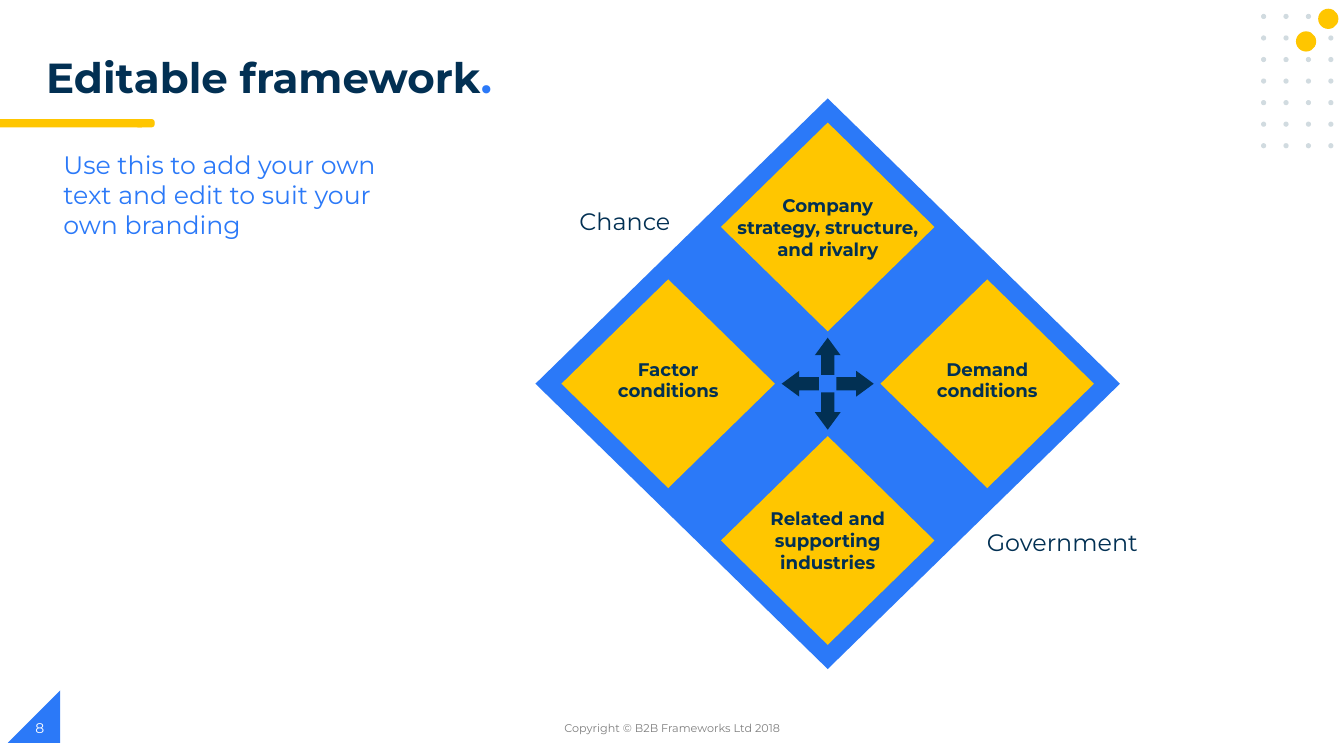
from copy import deepcopy
from itertools import product

from pptx import Presentation
from pptx.dml.color import RGBColor
from pptx.enum.shapes import MSO_SHAPE
from pptx.enum.text import MSO_ANCHOR, MSO_AUTO_SIZE, PP_ALIGN
from pptx.oxml.ns import qn
from pptx.util import Cm, Pt

BLUE = RGBColor(0x2B, 0x79, 0xF8)
GOLD = RGBColor(0xFF, 0xC6, 0x00)
NAVY = RGBColor(0x02, 0x30, 0x53)
GREY = RGBColor(0x7F, 0x7F, 0x7F)
PALE = RGBColor(0xD1, 0xDB, 0xE0)
WHITE = RGBColor(0xFF, 0xFF, 0xFF)

TITLE = [("Editable framework", NAVY), (".", BLUE)]

# Text, box (left, top, width, height in cm), size, colour, format of the frame
PAD = dict(margin_left=Cm(0.25), margin_right=Cm(0.25),
           margin_top=Cm(0.13), margin_bottom=Cm(0.13))
BARE = dict.fromkeys(PAD, 0)
MID = PAD | dict(vertical_anchor=MSO_ANCHOR.MIDDLE)
NOTES = [
    ("Copyright © B2B Frameworks Ltd 2018", (11.23, 17.83, 11.43, 1.02),
     8, GREY, MID, PP_ALIGN.CENTER),
    ("8", (0.64, 17.83, 7.62, 1.02), 10, WHITE, MID, PP_ALIGN.LEFT),
    ("Use this to add your own text and edit to suit your own branding",
     (1.35, 3.63, 9.02, 4.39), 18, BLUE, PAD, PP_ALIGN.LEFT),
    ("Chance", (14.6, 5.2, 3.2, 0.76), 17, NAVY, BARE, PP_ALIGN.LEFT),
    ("Government", (24.87, 13.3, 4.6, 0.76), 17, NAVY, BARE, PP_ALIGN.LEFT),
]

# Side of the centre (x, y), text (\v breaks a line), arrow, lift of the text
FORCES = [
    (0, -1, "Company\vstrategy, structure,\vand rivalry", MSO_SHAPE.UP_ARROW, 0),
    (1, 0, "Demand\vconditions", MSO_SHAPE.RIGHT_ARROW, 0.2),
    (0, 1, "Related and\vsupporting\vindustries", MSO_SHAPE.DOWN_ARROW, 0),
    (-1, 0, "Factor\vconditions", MSO_SHAPE.LEFT_ARROW, 0.2),
]
MIDX, MIDY = 20.86, 9.67
OUTER = (14.73, 14.38)
INNER = (5.38, 5.26)
STEPX, STEPY = 4.02, 3.95
ARROW = (0.94, 0.65)
GAP = 0.69

DOTS = dict(cols=4, rows=7, left=31.78, top=0.35, dx=0.565, dy=0.543, size=0.13)
DISCS = [(33.22, 0.22), (32.66, 0.79)]


def apply(item, **form):
    for key, value in form.items():
        setattr(item, key, value)


def draw(kind, left, top, wide, high, color):
    shape = slide.shapes.add_shape(kind, Cm(left), Cm(top), Cm(wide), Cm(high))
    shape.shadow.inherit = False
    shape.fill.solid()
    shape.fill.fore_color.rgb = color
    shape.line.fill.background()
    return shape


def center(kind, x, y, size, color):
    wide, high = size
    return draw(kind, x - wide / 2, y - high / 2, wide, high, color)


def style(run, size, color, bold=False):
    apply(run.font, name="Montserrat", size=Pt(size), bold=bold)
    run.font.color.rgb = color


def write(frame, text, size, color, align, bold=False):
    frame.text = text
    para = frame.paragraphs[0]
    para.alignment = align
    for run in para.runs:
        style(run, size, color, bold)
    for gap in para._p.findall(qn("a:br")):
        gap.append(deepcopy(para.runs[0]._r.rPr))


deck = Presentation()
apply(deck, slide_width=Cm(33.87), slide_height=Cm(19.05))
slide = deck.slides.add_slide(deck.slide_layouts[5])

# Corner, rule and dots
corner = draw(MSO_SHAPE.RIGHT_TRIANGLE, 0.2, 17.4, 1.32, 1.32, BLUE)
corner._element.spPr.find(qn("a:xfrm")).set("flipH", "1")
for top in (3.0, 3.05):
    draw(MSO_SHAPE.FLOWCHART_TERMINATOR, 3.4, top, 0.5, 0.16, GOLD)
    draw(MSO_SHAPE.RECTANGLE, 0, top, 3.58, 0.16, GOLD)
for row, col in product(range(DOTS["rows"]), range(DOTS["cols"])):
    draw(MSO_SHAPE.OVAL, DOTS["left"] + col * DOTS["dx"],
         DOTS["top"] + row * DOTS["dy"], DOTS["size"], DOTS["size"], PALE)
for left, top in DISCS:
    draw(MSO_SHAPE.OVAL, left, top, 0.51, 0.51, GOLD)

# Title
title = slide.shapes.title
apply(title, left=Cm(0.91), top=Cm(1.32), width=Cm(14.33), height=Cm(1.52))
apply(title.text_frame, word_wrap=True, auto_size=MSO_AUTO_SIZE.NONE,
      vertical_anchor=MSO_ANCHOR.TOP, **PAD)
head = title.text_frame.paragraphs[0]
apply(head, alignment=PP_ALIGN.LEFT, line_spacing=0.9)
for text, color in TITLE:
    run = head.add_run()
    run.text = text
    style(run, 30, color, True)

# Diamond of forces
center(MSO_SHAPE.DIAMOND, MIDX, MIDY, OUTER, BLUE)
for x, y, text, arrow, lift in FORCES:
    tile = center(MSO_SHAPE.DIAMOND, MIDX + x * STEPX, MIDY + y * STEPY, INNER, GOLD)
    apply(tile.text_frame, word_wrap=False, vertical_anchor=MSO_ANCHOR.MIDDLE,
          **BARE | dict(margin_bottom=Cm(lift)))
    write(tile.text_frame, text, 13, NAVY, PP_ALIGN.CENTER, True)
    size = ARROW if x else ARROW[::-1]
    mark = center(arrow, MIDX + x * GAP, MIDY + y * GAP, size, NAVY)
    mark.adjustments[0] = 0.52
    mark.adjustments[1] = 0.68

# Texts around it
for text, box, size, color, form, align in NOTES:
    frame = slide.shapes.add_textbox(*map(Cm, box)).text_frame
    apply(frame, word_wrap=True, **form)
    write(frame, text, size, color, align)

deck.save("out.pptx")
